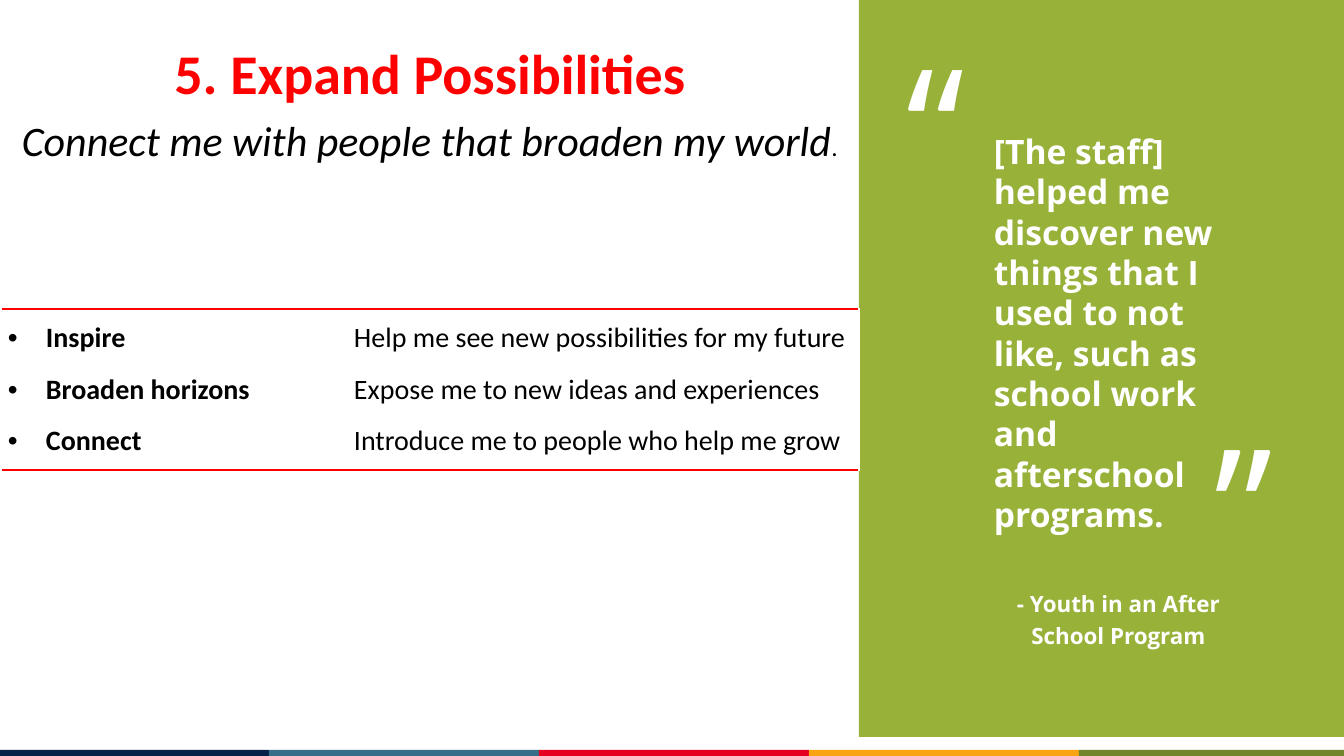
from lxml.etree import SubElement
from pptx import Presentation
from pptx.dml.color import RGBColor
from pptx.enum.shapes import MSO_SHAPE
from pptx.enum.text import MSO_ANCHOR, PP_ALIGN
from pptx.oxml.ns import qn
from pptx.util import Emu, Pt

SCALE = 914400 / 100.8


def px(length):
    return Emu(round(length * SCALE))


def color(value):
    return RGBColor.from_string(value)


presentation = Presentation()
presentation.slide_width = px(1344)
presentation.slide_height = px(756)
slide = presentation.slides.add_slide(presentation.slide_layouts[6])

stripe_colors = ["022048", "356E87", "E6001F", "F9A413", "72852B"]
rectangles = [(270 * index - 1, 750, 270, 10, fill) for index, fill in enumerate(stripe_colors)]
rectangles.append((859, 0, 485, 737, "97B139"))
for left, top, width, height, fill in rectangles:
    shape = slide.shapes.add_shape(MSO_SHAPE.RECTANGLE, px(left), px(top), px(width), px(height))
    shape.shadow.inherit = False
    shape.fill.solid()
    shape.fill.fore_color.rgb = color(fill)
    shape.line.fill.background()

quote_mark = {"name": "Open Sans", "size": Pt(119), "color": "FFFFFF"}
quote = {"name": "Open Sans", "size": Pt(24), "bold": True, "color": "FFFFFF"}
attribution = {**quote, "size": Pt(16)}
title = {"name": "Calibri", "size": Pt(40), "bold": True, "color": "FF0000"}
subtitle = {"name": "Calibri", "size": Pt(30), "italic": True, "color": "000000"}
period = {**subtitle, "size": Pt(18)}
practice = {"name": "Calibri", "size": Pt(20), "bold": True, "color": "000000"}
description = {**practice, "bold": False}

tight = {"line_spacing": 0.8}
centered = {"alignment": PP_ALIGN.CENTER}
small_margins = {"margin_left": px(5), "margin_right": px(5), "margin_top": px(2), "margin_bottom": px(2)}
middle = {"vertical_anchor": MSO_ANCHOR.MIDDLE}

text_boxes = [
    ((902, 60, 58, 166), small_margins, [(tight, [("“", quote_mark)])]),
    ((1210, 440, 57, 166), small_margins, [(tight, [("”", quote_mark)])]),
    ((989, 129, 259, 483), small_margins, [
        ({}, [("[The staff] helped me discover new things that I used to not like, "
               "such as school work and afterschool programs.", quote)]),
        ({**centered, "line_spacing": 1.2, "space_before": Pt(36)},
         [("- Youth in an After School Program", attribution)]),
    ]),
    ((1, 33, 858, 137), middle, [
        ({**centered, "space_after": Pt(6)}, [("5. Expand Possibilities", title)]),
        (centered, [("Connect me with people that broaden my world", subtitle), (".", period)]),
    ]),
]

table_shape = slide.shapes.add_table(1, 1, px(1), px(309), px(858), px(161))
table = table_shape.table
table.first_row = False
table.horz_banding = False
cell = table.cell(0, 0)
cell_format = {**middle, "margin_left": px(7), "margin_right": px(7), "margin_top": 0, "margin_bottom": 0}
for name, value in cell_format.items():
    setattr(cell, name, value)
cell_properties = cell._tc.get_or_add_tcPr()
for edge in ["lnT", "lnB"]:
    border = SubElement(cell_properties, qn(f"a:{edge}"), w=str(Pt(1)))
    border_fill = SubElement(border, qn("a:solidFill"))
    SubElement(border_fill, qn("a:srgbClr"), val="FF0000")
cell.fill.solid()
cell.fill.fore_color.rgb = color("FFFFFF")

practices = [
    ("Inspire", "Help me see new possibilities for my future"),
    ("Broaden horizons", "Expose me to new ideas and experiences"),
    ("Connect", "Introduce me to people who help me grow"),
]
practice_paragraphs = [
    ({"space_before": Pt(6 if index else 0), "space_after": Pt(6)},
     [(f"{heading}\t", practice), (explanation, description)])
    for index, (heading, explanation) in enumerate(practices)
]

text_blocks = [(cell.text_frame, practice_paragraphs)]
for bounds, frame_format, paragraphs in text_boxes:
    frame = slide.shapes.add_textbox(*map(px, bounds)).text_frame
    frame.word_wrap = True
    for name, value in frame_format.items():
        setattr(frame, name, value)
    text_blocks.append((frame, paragraphs))

for frame, paragraphs in text_blocks:
    for index, (paragraph_format, runs) in enumerate(paragraphs):
        paragraph = frame.add_paragraph() if index else frame.paragraphs[0]
        for name, value in paragraph_format.items():
            setattr(paragraph, name, value)
        for text, font_format in runs:
            run = paragraph.add_run()
            run.text = text
            for name, value in font_format.items():
                if name == "color":
                    run.font.color.rgb = color(value)
                else:
                    setattr(run.font, name, value)

for paragraph in cell.text_frame.paragraphs:
    properties = paragraph._p.get_or_add_pPr()
    properties.set("marL", str(px(38)))
    properties.set("indent", str(px(-38)))
    SubElement(properties, qn("a:buFont"), typeface="Arial")
    SubElement(properties, qn("a:buChar"), char="•")
    tabs = SubElement(properties, qn("a:tabLst"))
    SubElement(tabs, qn("a:tab"), pos=str(px(346)), algn="l")

presentation.save("out.pptx")
